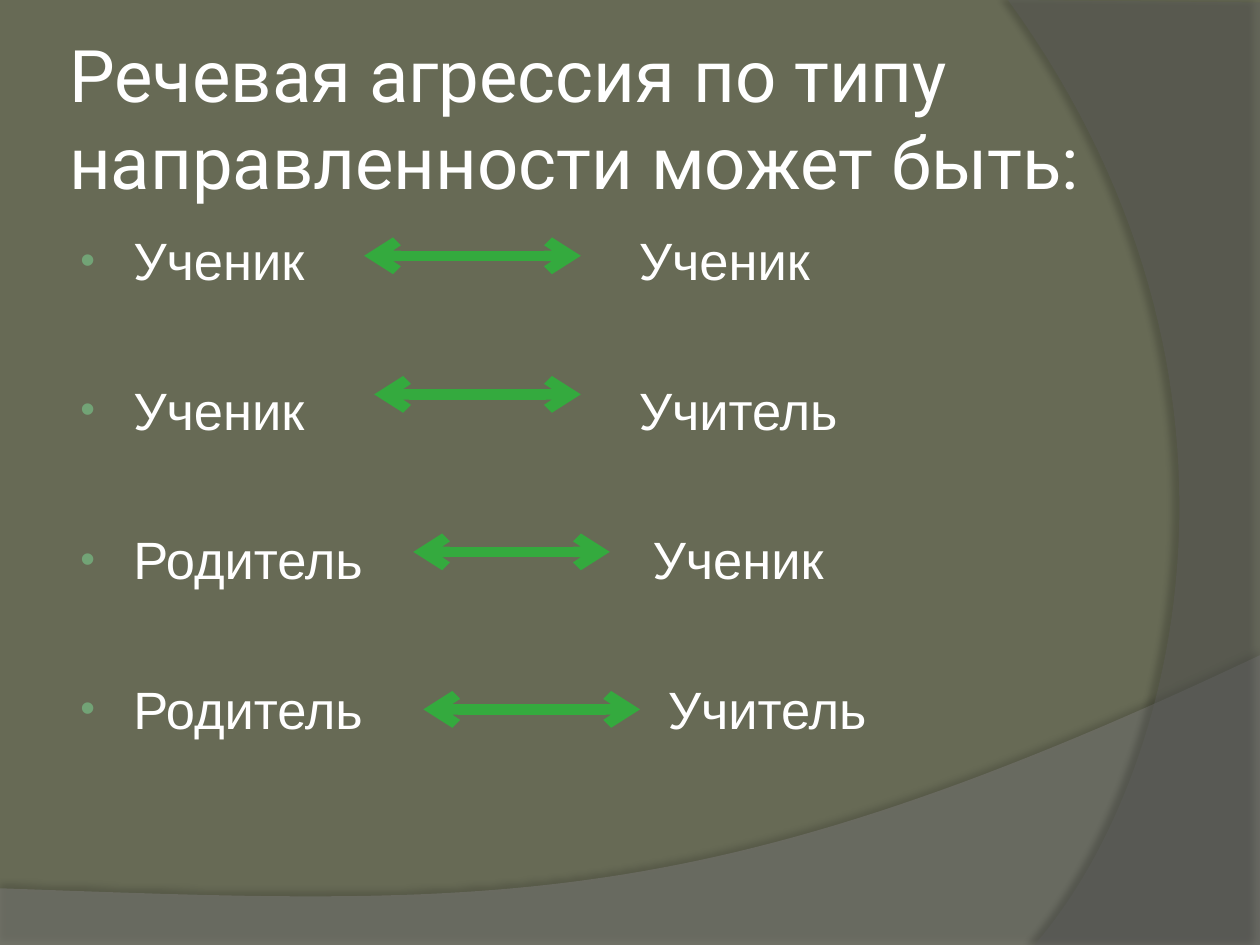
from lxml import etree
from pptx import Presentation
from pptx.dml.color import RGBColor
from pptx.enum import shapes, text
from pptx.oxml import parse_xml
from pptx.oxml.ns import nsdecls, qn
from pptx.util import Inches, Pt

# Content
TITLE = "Речевая агрессия по типу направленности может быть:"
PAIRS = [  # speaker, target, indent of target, arrow start, arrow end, arrow height
    ("Ученик", "Ученик", 0, 2.89, 4.61, 2.03),
    ("Ученик", "Учитель", 0, 2.97, 4.61, 3.13),
    ("Родитель", "Ученик", 0.11, 3.28, 4.84, 4.38),
    ("Родитель", "Учитель", 0.23, 3.36, 5.08, 5.63),
]
COLORS = {"background": "676A55", "wave": "7F7F7F", "arc": "5E5E5E",
          "text": "FFFFFF", "bullet": "72A376", "arrow": "34AA3E", "shadow": "000000"}
ROW_GAP = 49.5  # points between the rows


def color(name):
    return RGBColor.from_string(COLORS[name])


def curve(start, first, second, end, steps=60):
    """Points along a cubic curve, without its start."""
    points = []
    for step in range(1, steps + 1):
        t = step / steps
        weights = ((1 - t) ** 3, 3 * t * (1 - t) ** 2, 3 * t * t * (1 - t), t ** 3)
        points.append(tuple(sum(w * p[axis] for w, p in zip(weights, (start, first, second, end)))
                            for axis in (0, 1)))
    return points


def add_backdrop(page, name, points, opacity, shadow_opacity, distance, direction):
    corners = [(Inches(x), Inches(y)) for x, y in points]
    builder = page.shapes.build_freeform(*corners[0])
    builder.add_line_segments(corners[1:], close=True)
    shape = builder.convert_to_shape()
    shape.fill.solid()
    shape.fill.fore_color.rgb = color(name)
    shape.line.fill.background()
    fill_color = shape.fill._xPr.find(qn("a:solidFill"))[0]
    etree.SubElement(fill_color, qn("a:alpha"), val=str(opacity * 1000))
    shape._element.spPr.append(parse_xml(
        f'<a:effectLst {nsdecls("a")}><a:outerShdw blurRad="{Pt(4)}" dist="{Pt(distance)}" '
        f'dir="{direction * 60000}" algn="ctr" rotWithShape="0"><a:srgbClr val="{COLORS["shadow"]}">'
        f'<a:alpha val="{shadow_opacity * 1000}"/></a:srgbClr></a:outerShdw></a:effectLst>'))


def add_text(page, lines, place, font, size, gap=0, top=0.05, side=0.05):
    box = page.shapes.add_textbox(*map(Inches, place))
    frame = box.text_frame
    frame.word_wrap = True
    frame.margin_left = frame.margin_right = Inches(side)
    frame.margin_top, frame.margin_bottom = Inches(top), Inches(0.05)
    frame.text = "\n".join(lines)
    for index, para in enumerate(frame.paragraphs):
        para.space_before = Pt(gap if index else 0)
        for span in para.runs:
            span.font.name, span.font.size = font, Pt(size)
            span.font.color.rgb = color("text")
    return frame


def set_indent(para, left, hanging=0):
    props = para._p.get_or_add_pPr()
    props.set("marL", str(Inches(left)))
    props.set("indent", str(Inches(-hanging)))
    return props


def add_bullet(para):
    props = set_indent(para, 0.46, 0.42)
    bullet_color = etree.SubElement(props, qn("a:buClr"))
    etree.SubElement(bullet_color, qn("a:srgbClr"), val=COLORS["bullet"])
    etree.SubElement(props, qn("a:buSzPct"), val="80000")
    etree.SubElement(props, qn("a:buFont"), typeface="Arial")
    etree.SubElement(props, qn("a:buChar"), char="•")


def add_arrow(page, start, end, height):
    arrow = page.shapes.add_connector(shapes.MSO_CONNECTOR.STRAIGHT,
                                      *map(Inches, (start, height, end, height)))
    arrow.line.color.rgb = color("arrow")
    arrow.line.width = Pt(6)
    outline = arrow.line._get_or_add_ln()
    for tip in ("a:headEnd", "a:tailEnd"):
        etree.SubElement(outline, qn(tip), type="arrow")
    etree.SubElement(arrow._element.spPr, qn("a:effectLst"))


def main():
    deck = Presentation()
    deck.slide_width, deck.slide_height = Inches(10), Inches(7.5)
    page = deck.slides.add_slide(deck.slide_layouts[6])
    page.background.fill.solid()
    page.background.fill.fore_color.rgb = color("background")

    # Backdrop: wave along the bottom, arc along the right
    wave = [(0, 7.05), (0, 7.51), (10, 7.51), (10, 5.2)]
    wave += curve(wave[-1], (5.59, 7.29), (3.91, 7.19), wave[0])
    add_backdrop(page, "wave", wave, 45, 35, 3.5, 270)
    arc = [(10, 0.02), (10, 7.5), (8.21, 7.5)]
    arc += curve(arc[-1], (9.35, 6.19), (10.18, 3), (8, 0))
    add_backdrop(page, "arc", arc, 40, 45, 4, 180)

    # Title
    title = add_text(page, [TITLE], (0.5, 0.3, 8.17, 1.25), "Roboto", 41.4)
    title.vertical_anchor = text.MSO_ANCHOR.MIDDLE

    # Speakers on the left, targets on the right
    speakers, targets, indents, *_ = zip(*PAIRS)
    left = add_text(page, speakers, (0.5, 1.72, 2.8, 4.98), "Arial", 30, ROW_GAP, 0.09, 0.1)
    for para in left.paragraphs:
        add_bullet(para)
    right = add_text(page, targets, (5.07, 1.72, 3.6, 4.98), "Arial", 30, ROW_GAP, 0.09, 0)
    for para, indent in zip(right.paragraphs, indents):
        set_indent(para, indent)

    # Arrows between them
    for *_, start, end, height in PAIRS:
        add_arrow(page, start, end, height)

    deck.save("out.pptx")


if __name__ == "__main__":
    main()
